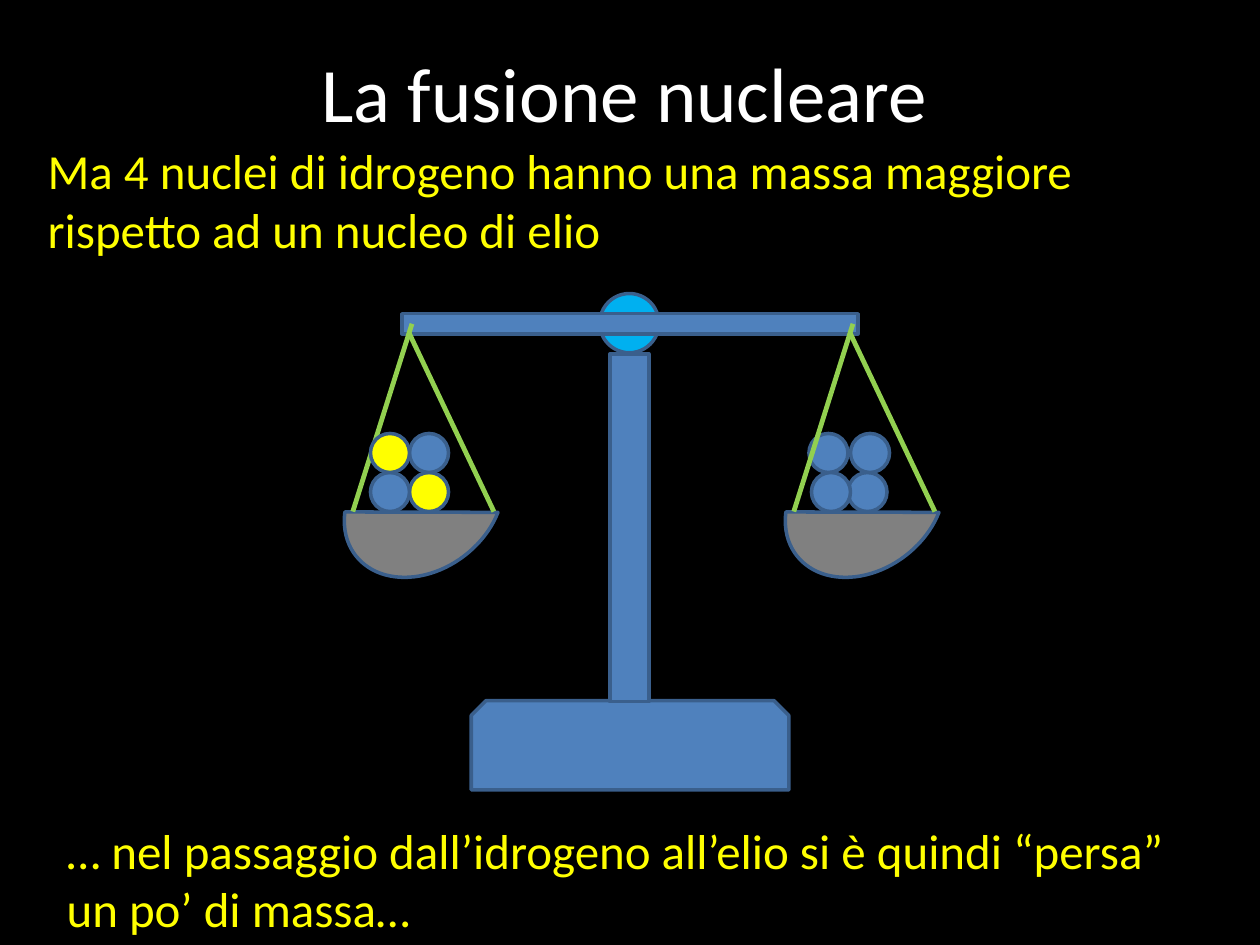
from dataclasses import dataclass

from lxml.etree import SubElement
from pptx import Presentation
from pptx.dml.color import RGBColor
from pptx.enum.shapes import MSO_CONNECTOR, MSO_SHAPE
from pptx.enum.text import MSO_ANCHOR, MSO_AUTO_SIZE, PP_ALIGN
from pptx.oxml.ns import qn
from pptx.shapes.autoshape import Shape
from pptx.shapes.shapetree import GroupShapes
from pptx.slide import Slide
from pptx.util import Inches, Pt

BLACK, WHITE, YELLOW = "000000", "FFFFFF", "FFFF00"
BLUE, OUTLINE, SKY = "4F81BD", "3A5F8C", "00B0F0"
GRAY, GREEN = "808080", "92D050"
FONT = "Calibri"
BALL_SIZE = 0.31
UPPER_ROW, LOWER_ROW = 3.44, 3.75


@dataclass
class Part:
    kind: MSO_SHAPE
    left: float
    top: float
    width: float
    height: float
    fill: str = BLUE


@dataclass
class Caption:
    text: str
    left: float
    top: float


@dataclass
class Ball:
    left: float
    top: float
    fill: str = BLUE


@dataclass
class Pan:
    left: float
    balls_behind: list[Ball]
    balls_in_front: list[Ball]


STAND = [
    Part(MSO_SHAPE.SNIP_2_SAME_RECTANGLE, 3.74, 5.56, 2.52, 0.71),
    Part(MSO_SHAPE.RECTANGLE, 4.84, 2.81, 0.31, 2.76),
    Part(MSO_SHAPE.OVAL, 4.76, 2.33, 0.47, 0.47, SKY),
    Part(MSO_SHAPE.RECTANGLE, 3.19, 2.49, 3.62, 0.16),
]

PANS = [
    Pan(2.68, [], [
        Ball(3.25, LOWER_ROW, YELLOW), Ball(3.25, UPPER_ROW),
        Ball(2.94, LOWER_ROW), Ball(2.94, UPPER_ROW, YELLOW),
    ]),
    Pan(6.18, [Ball(6.73, LOWER_ROW), Ball(6.42, UPPER_ROW)],
        [Ball(6.75, UPPER_ROW), Ball(6.44, LOWER_ROW)]),
]

CAPTIONS = [
    Caption("Ma 4 nuclei di idrogeno hanno una massa maggiore rispetto ad un "
            "nucleo di elio", 0.28, 1.07),
    Caption("… nel passaggio dall’idrogeno all’elio si è quindi “persa” "
            "un po’ di massa…", 0.43, 6.46),
]


def color(value: str) -> RGBColor:
    return RGBColor.from_string(value)


def draw_part(shapes: GroupShapes, part: Part) -> Shape:
    shape = shapes.add_shape(part.kind, Inches(part.left), Inches(part.top),
                             Inches(part.width), Inches(part.height))
    shape.shadow.inherit = False
    shape.fill.solid()
    shape.fill.fore_color.rgb = color(part.fill)
    shape.line.color.rgb = color(OUTLINE)
    shape.line.width = Pt(2)
    return shape


def draw_balls(shapes: GroupShapes, balls: list[Ball]) -> None:
    for ball in balls:
        draw_part(shapes, Part(MSO_SHAPE.OVAL, ball.left, ball.top,
                               BALL_SIZE, BALL_SIZE, ball.fill))


def draw_string(shapes: GroupShapes, start: tuple[float, float],
                end: tuple[float, float]) -> None:
    string = shapes.add_connector(MSO_CONNECTOR.STRAIGHT,
                                  *map(Inches, start + end))
    string.line.color.rgb = color(GREEN)
    string.line.width = Pt(2.75)
    SubElement(string._element.spPr, qn("a:effectLst"))


def draw_pan(slide: Slide, pan: Pan) -> None:
    """Draw one hanging pan, its strings and its balls as a group."""
    shapes = slide.shapes.add_group_shape().shapes
    draw_balls(shapes, pan.balls_behind)
    dish = draw_part(shapes, Part(MSO_SHAPE.CHORD, pan.left, 3.46, 1.37, 1.06, GRAY))
    dish.rotation = 322.4
    # The chord runs from 45 to 211 degrees, at 0.6 units per degree.
    dish.adjustments[0] = 27
    dish.adjustments[1] = 126.56
    draw_string(shapes, (pan.left + 0.57, 2.65), (pan.left + 1.24, 4.06))
    draw_string(shapes, (pan.left + 0.59, 2.57), (pan.left + 0.12, 4.06))
    draw_balls(shapes, pan.balls_in_front)


def draw_title(slide: Slide, text: str) -> None:
    title = slide.shapes.title
    title.left, title.top = Inches(0.5), Inches(0.3)
    title.width, title.height = Inches(8.91), Inches(0.85)
    title.text_frame.text = text
    title.text_frame.vertical_anchor = MSO_ANCHOR.MIDDLE
    paragraph = title.text_frame.paragraphs[0]
    paragraph.alignment = PP_ALIGN.CENTER
    paragraph.font.name = FONT
    paragraph.font.size = Pt(44)
    paragraph.font.color.rgb = color(WHITE)


def draw_caption(slide: Slide, caption: Caption) -> None:
    box = slide.shapes.add_textbox(Inches(caption.left), Inches(caption.top),
                                   Inches(9.29), Inches(1.04))
    frame = box.text_frame
    frame.word_wrap = True
    frame.auto_size = MSO_AUTO_SIZE.SHAPE_TO_FIT_TEXT
    frame.text = caption.text
    font = frame.paragraphs[0].font
    font.name = FONT
    font.size = Pt(28)
    font.color.rgb = color(YELLOW)


def main() -> None:
    presentation = Presentation()
    presentation.slide_width = Inches(10)
    presentation.slide_height = Inches(7.5)
    slide = presentation.slides.add_slide(presentation.slide_layouts[5])
    slide.background.fill.solid()
    slide.background.fill.fore_color.rgb = color(BLACK)

    draw_title(slide, "La fusione nucleare")
    for part in STAND:
        draw_part(slide.shapes, part)
    for pan in PANS:
        draw_pan(slide, pan)
    for caption in CAPTIONS:
        draw_caption(slide, caption)
    presentation.save("out.pptx")


if __name__ == "__main__":
    main()
